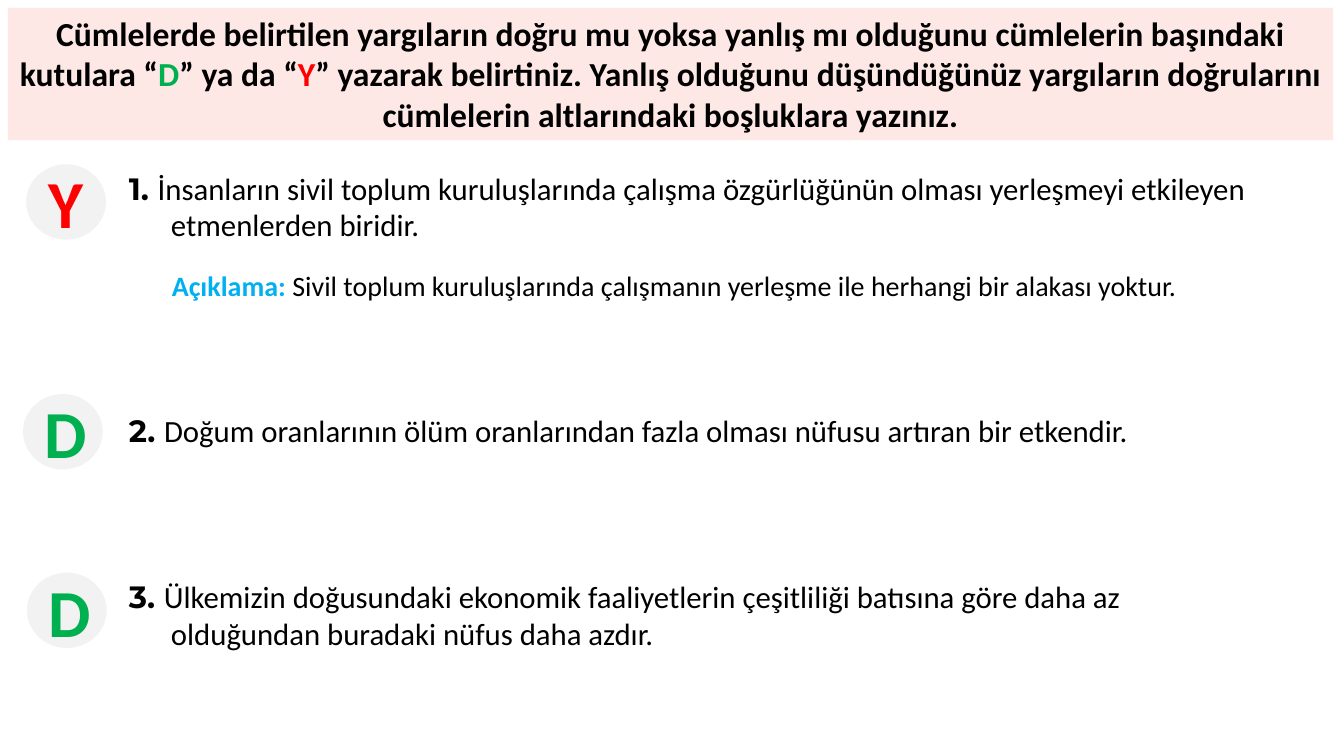
from pptx import Presentation
from pptx.dml.color import RGBColor
from pptx.enum.shapes import MSO_SHAPE
from pptx.enum.text import MSO_ANCHOR, MSO_AUTO_SIZE, PP_ALIGN
from pptx.util import Cm, Pt

OVAL = MSO_SHAPE.OVAL
TOP, MIDDLE = MSO_ANCHOR.TOP, MSO_ANCHOR.MIDDLE
CENTER, LEFT = PP_ALIGN.CENTER, PP_ALIGN.LEFT
NO_AUTOFIT = MSO_AUTO_SIZE.NONE

COLORS = {
    "text": "000000",
    "banner": "FEE8E6",
    "badge": "F2F2F2",
    "D": "00B050",
    "Y": "FF0000",
    "note": "00B0F0",
}
HANGING = Cm(1.06)


def add_run(paragraph, text, size, color="text", bold=False, font="Calibri"):
    run = paragraph.add_run()
    run.text = text
    run.font.name = font
    run.font.size = Pt(size)
    run.font.bold = bold
    run.font.color.rgb = RGBColor.from_string(COLORS[color])


def fill_solid(shape, color):
    shape.fill.solid()
    shape.fill.fore_color.rgb = RGBColor.from_string(COLORS[color])
    shape.line.fill.background()


prs = Presentation()
prs.slide_width, prs.slide_height = Cm(33.87), Cm(19.05)
slide = prs.slides.add_slide(prs.slide_layouts[5])

# Instruction banner
banner = slide.shapes.title
banner.left, banner.top, banner.width, banner.height = Cm(0.2), Cm(0.2), Cm(33.4), Cm(3.33)
fill_solid(banner, "banner")
frame = banner.text_frame
frame.auto_size = NO_AUTOFIT
frame.word_wrap = True
frame.vertical_anchor = TOP
instruction = [
    [("Cümlelerde belirtilen yargıların doğru mu yoksa yanlış mı olduğunu "
      "cümlelerin başındaki", "text")],
    [("kutulara “", "text"), ("D", "D"), ("” ya da “", "text"), ("Y", "Y"),
     ("” yazarak belirtiniz. Yanlış olduğunu düşündüğünüz yargıların doğrularını "
      "cümlelerin altlarındaki boşluklara yazınız.", "text")],
]
for index, parts in enumerate(instruction):
    paragraph = frame.paragraphs[0] if index == 0 else frame.add_paragraph()
    paragraph.alignment = CENTER
    paragraph.space_before = Pt(0)
    for text, color in parts:
        add_run(paragraph, text, 24, color, bold=True)

# Statements: answer, badge left, badge top, text top, text height, lines
statements = [
    ("Y", 0.66, 4.14, 4.14, 2.13,
     ["İnsanların sivil toplum kuruluşlarında çalışma özgürlüğünün olması "
      "yerleşmeyi etkileyen", "etmenlerden biridir."]),
    ("D", 0.58, 9.93, 10.26, 1.2,
     ["Doğum oranlarının ölüm oranlarından fazla olması nüfusu artıran bir etkendir."]),
    ("D", 0.68, 14.43, 14.43, 2.13,
     ["Ülkemizin doğusundaki ekonomik faaliyetlerin çeşitliliği batısına göre daha az",
      "olduğundan buradaki nüfus daha azdır."]),
]
for number, (answer, badge_left, badge_top, top, height, lines) in enumerate(statements, 1):
    statement = slide.shapes.add_textbox(Cm(3), Cm(top), Cm(29.57), Cm(height))
    statement.text_frame.word_wrap = True
    paragraph = statement.text_frame.paragraphs[0]
    properties = paragraph._p.get_or_add_pPr()
    properties.set("marL", str(HANGING))
    properties.set("indent", str(-HANGING))
    add_run(paragraph, f"{number}. ", 22, bold=True, font="Montserrat")
    for index, line in enumerate(lines):
        if index:
            paragraph.add_line_break()
        add_run(paragraph, line, 22)

    badge = slide.shapes.add_shape(OVAL, Cm(badge_left), Cm(badge_top), Cm(2.01), Cm(1.9))
    badge.shadow.inherit = False
    fill_solid(badge, "badge")
    badge.text_frame.vertical_anchor = MIDDLE
    paragraph = badge.text_frame.paragraphs[0]
    paragraph.alignment = CENTER
    add_run(paragraph, answer, 48, answer, bold=True)

# Explanation of the false statement
explanation = slide.shapes.add_textbox(Cm(4.08), Cm(6.65), Cm(26), Cm(1.12))
explanation.text_frame.word_wrap = True
paragraph = explanation.text_frame.paragraphs[0]
paragraph.alignment = LEFT
add_run(paragraph, "Açıklama: ", 20, "note", bold=True)
add_run(paragraph, "Sivil toplum kuruluşlarında çalışmanın yerleşme ile herhangi bir "
        "alakası yoktur.", 20)

prs.save("out.pptx")
